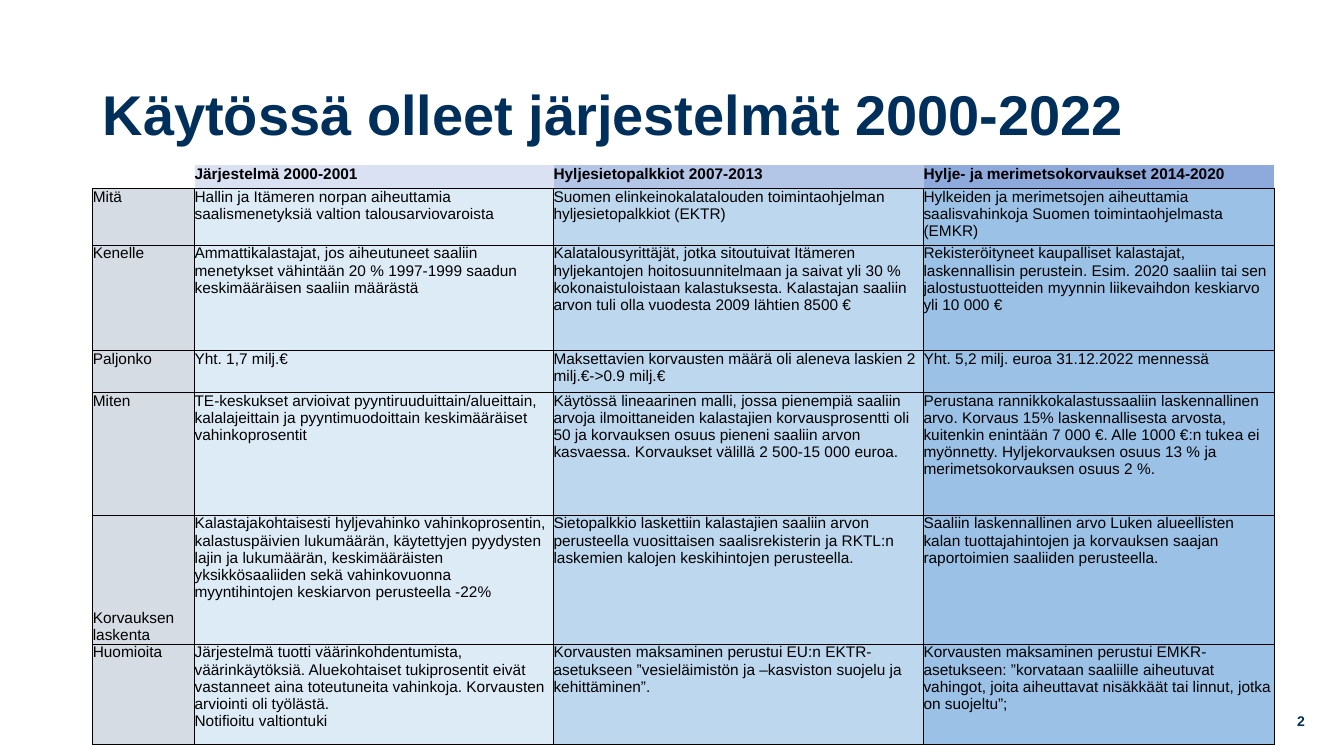
"""Builds a slide with a table that compares the compensation schemes of 2000-2022."""
import pptx
import pptx.dml.color
import pptx.enum.text
import pptx.oxml
import pptx.oxml.ns
import pptx.util

Inches = pptx.util.Inches
Pt = pptx.util.Pt
Align = pptx.enum.text.PP_ALIGN
Anchor = pptx.enum.text.MSO_ANCHOR
NAVY = "002F5B"


def color(code):
    return pptx.dml.color.RGBColor.from_string(code)


def style(para, size, code, bold):
    para.font.name = "Arial"
    para.font.size = Pt(size)
    para.font.bold = bold
    para.font.color.rgb = color(code)


deck = pptx.Presentation()
deck.slide_width = Inches(13.33)
deck.slide_height = Inches(7.5)
slide = deck.slides.add_slide(deck.slide_layouts[6])

labels = [
    ("Käytössä olleet järjestelmät 2000-2022", (0.92, 0.4, 10.64, 1.45), 40, Align.LEFT),
    ("2", (10.04, 6.95, 3, 0.4), 10, Align.RIGHT),
]
for text, place, size, align in labels:
    frame = slide.shapes.add_textbox(*[Inches(n) for n in place]).text_frame
    frame.word_wrap = True
    frame.vertical_anchor = Anchor.MIDDLE
    para = frame.paragraphs[0]
    para.text = text
    para.alignment = align
    style(para, size, NAVY, True)

rows = [
    (0.23, ["",
            "Järjestelmä 2000-2001",
            "Hyljesietopalkkiot 2007-2013",
            "Hylje- ja merimetsokorvaukset 2014-2020"]),
    (0.56, ["Mitä",
            "Hallin ja Itämeren norpan aiheuttamia saalismenetyksiä valtion talousarviovaroista",
            "Suomen elinkeinokalatalouden toimintaohjelman hyljesietopalkkiot (EKTR)",
            "Hylkeiden ja merimetsojen aiheuttamia saalisvahinkoja Suomen toimintaohjelmasta "
            "(EMKR)"]),
    (1.05, ["Kenelle",
            "Ammattikalastajat, jos aiheutuneet saaliin menetykset vähintään 20 % 1997-1999 "
            "saadun keskimääräisen saaliin määrästä",
            "Kalatalousyrittäjät, jotka sitoutuivat Itämeren hyljekantojen hoitosuunnitelmaan "
            "ja saivat yli 30 % kokonaistuloistaan kalastuksesta. Kalastajan saaliin arvon "
            "tuli olla vuodesta 2009 lähtien 8500 €",
            "Rekisteröityneet kaupalliset kalastajat, laskennallisin perustein. Esim. 2020 "
            "saaliin tai sen jalostustuotteiden myynnin liikevaihdon keskiarvo yli 10 000 €"]),
    (0.41, ["Paljonko",
            "Yht. 1,7 milj.€",
            "Maksettavien korvausten määrä oli aleneva laskien 2 milj.€->0.9 milj.€",
            "Yht. 5,2 milj. euroa 31.12.2022 mennessä"]),
    (1.22, ["Miten",
            "TE-keskukset arvioivat pyyntiruuduittain/alueittain, kalalajeittain ja "
            "pyyntimuodoittain keskimääräiset vahinkoprosentit",
            "Käytössä lineaarinen malli, jossa pienempiä saaliin arvoja ilmoittaneiden "
            "kalastajien korvausprosentti oli 50 ja korvauksen osuus pieneni saaliin arvon "
            "kasvaessa. Korvaukset välillä 2 500-15 000 euroa.",
            "Perustana rannikkokalastussaaliin laskennallinen arvo. Korvaus 15% "
            "laskennallisesta arvosta, kuitenkin enintään 7 000 €. Alle 1000 €:n tukea ei "
            "myönnetty. Hyljekorvauksen osuus 13 % ja merimetsokorvauksen osuus 2 %."]),
    (1.28, ["Korvauksen laskenta",
            "Kalastajakohtaisesti hyljevahinko vahinkoprosentin, kalastuspäivien lukumäärän, "
            "käytettyjen pyydysten lajin ja lukumäärän, keskimääräisten yksikkösaaliiden sekä "
            "vahinkovuonna myyntihintojen keskiarvon perusteella -22%",
            "Sietopalkkio laskettiin kalastajien saaliin arvon perusteella vuosittaisen "
            "saalisrekisterin ja RKTL:n laskemien kalojen keskihintojen perusteella.",
            "Saaliin laskennallinen arvo Luken alueellisten kalan tuottajahintojen ja "
            "korvauksen saajan raportoimien saaliiden perusteella."]),
    (0.99, ["Huomioita",
            "Järjestelmä tuotti väärinkohdentumista, väärinkäytöksiä. Aluekohtaiset "
            "tukiprosentit eivät vastanneet aina toteutuneita vahinkoja. Korvausten arviointi "
            "oli työlästä.\nNotifioitu valtiontuki",
            "Korvausten maksaminen perustui EU:n EKTR-asetukseen ”vesieläimistön ja "
            "–kasviston suojelu ja kehittäminen”.",
            "Korvausten maksaminen perustui EMKR-asetukseen: ”korvataan saaliille aiheutuvat "
            "vahingot, joita aiheuttavat nisäkkäät tai linnut, jotka on suojeltu”;"]),
]
widths = [1.01, 3.56, 3.67, 3.48]
heads = [None, "D9E1F2", "B4C6E7", "8EA9DB"]
fills = ["D6DCE4", "DDEBF7", "BDD7EE", "9BC2E6"]

holder = slide.shapes.add_table(len(rows), len(widths), Inches(0.92), Inches(1.64),
                                Inches(sum(widths)), Inches(5.74))
grid = holder.table
grid.first_row = False
grid.horz_banding = False
plain = "{2D5ABB26-0587-4C30-8999-92F81FD0307C}"
for tag in holder._element.iter(pptx.oxml.ns.qn("a:tableStyleId")):
    tag.text = plain
for col, width in zip(grid.columns, widths):
    col.width = Inches(width)

for r, (height, texts) in enumerate(rows):
    grid.rows[r].height = Inches(height)
    for c, text in enumerate(texts):
        cell = grid.cell(r, c)
        cell.margin_left = cell.margin_right = cell.margin_top = cell.margin_bottom = 0
        cell.text = text
        for para in cell.text_frame.paragraphs:
            style(para, 11, "000000", r == 0)
        if text == "Korvauksen laskenta":
            cell.vertical_anchor = Anchor.BOTTOM
        for side in ("LRTB" if r else "B"):
            cell._tc.get_or_add_tcPr().append(pptx.oxml.parse_xml(
                f'<a:ln{side} {pptx.oxml.ns.nsdecls("a")} w="6350"><a:solidFill>'
                f'<a:srgbClr val="000000"/></a:solidFill></a:ln{side}>'))
        shade = fills[c] if r else heads[c]
        if shade:
            cell.fill.solid()
            cell.fill.fore_color.rgb = color(shade)
        else:
            cell.fill.background()

deck.save("out.pptx")
